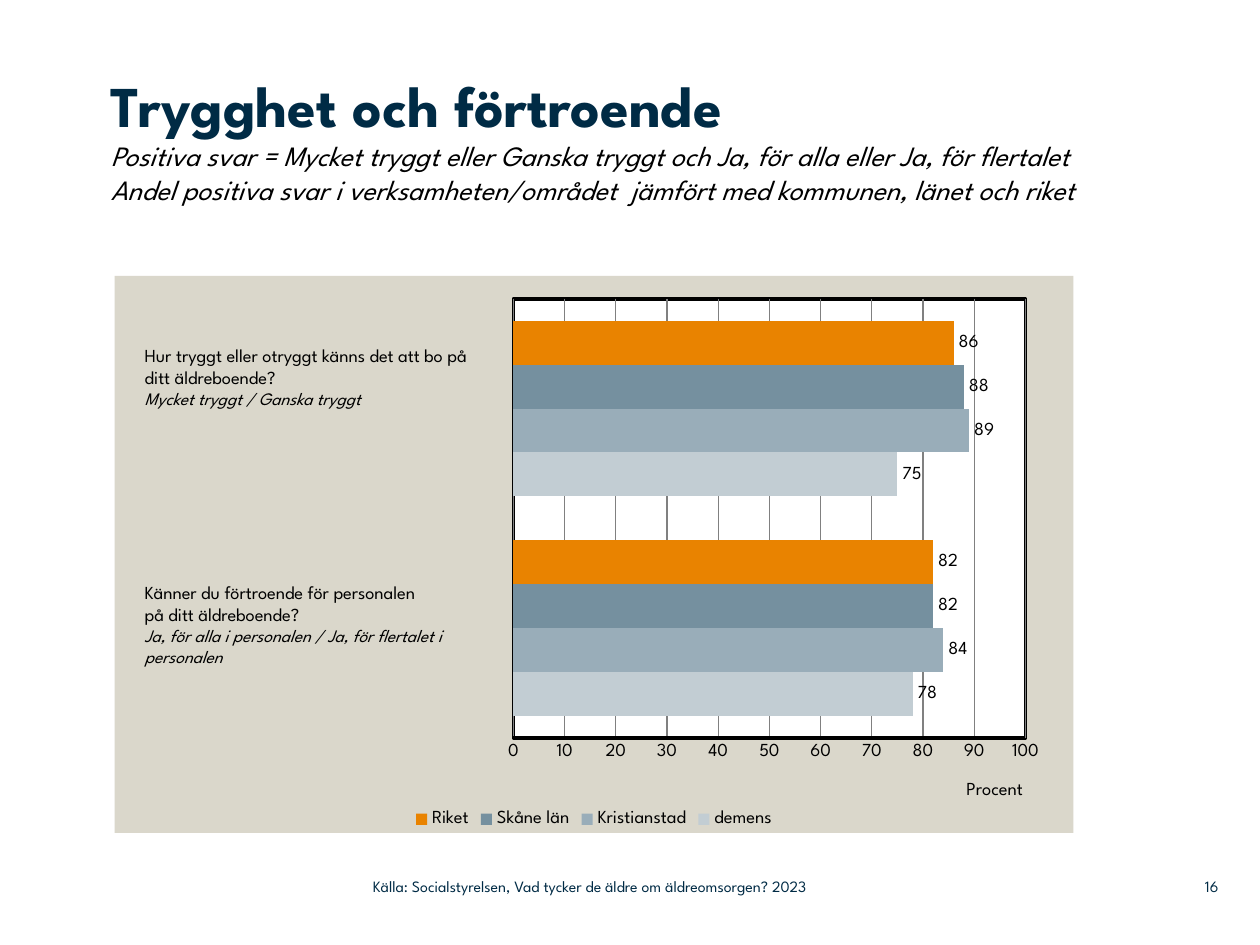
import pptx
import pptx.chart.data
import pptx.dml.color
import pptx.enum.chart
import pptx.enum.text
import pptx.oxml
import pptx.oxml.ns
import pptx.util
from pptx.util import Inches, Pt

FONT = "League Spartan"
COLORS = {"navy": "002B45", "black": "000000", "white": "FFFFFF", "sand": "DAD7CB", "grid": "808080"}
CATEGORIES = ["1", "2"]
SERIES = [
    ("demens", (78, 75), "C2CDD3"),
    ("Kristianstad", (84, 89), "99ADB9"),
    ("Skåne län", (82, 88), "75909F"),
    ("Riket", (82, 86), "E98300"),
]
QUESTIONS = [
    (2.68, 2.98, 0.81, ["Hur tryggt eller otryggt känns det att bo på ditt äldreboende?"],
     "Mycket tryggt / Ganska tryggt"),
    (4.56, 3, 0.98, ["Känner du förtroende för personalen", "på ditt äldreboende?"],
     "Ja, för alla i personalen / Ja, för flertalet i personalen"),
]
SUBTITLE = [
    "Positiva svar = Mycket tryggt eller Ganska tryggt och Ja, för alla eller Ja, för flertalet",
    "Andel positiva svar i verksamheten/området  jämfört med kommunen, länet och riket",
]


def rgb(hex_color):
    """Return a colour object for a hex string."""
    return pptx.dml.color.RGBColor.from_string(hex_color)


def set_font(font, size, color, bold=False, italic=False):
    """Apply the slide's typeface with the given look."""
    font.name, font.size, font.bold, font.italic = FONT, Pt(size), bold, italic
    font.color.rgb = rgb(color)


def clear_margins(frame):
    """Remove the insets of a text frame."""
    frame.margin_left = frame.margin_top = frame.margin_right = frame.margin_bottom = 0


def add_title(slide):
    """Fill the title placeholder with a heading and two italic lines."""
    title = slide.shapes.title
    title.left, title.top, title.width, title.height = Inches(0.88), Inches(0.55), Inches(7.75), Inches(1.64)
    frame = title.text_frame
    clear_margins(frame)
    frame.auto_size = pptx.enum.text.MSO_AUTO_SIZE.NONE
    frame.vertical_anchor = pptx.enum.text.MSO_ANCHOR.TOP
    paragraph = frame.paragraphs[0]
    paragraph.alignment = pptx.enum.text.PP_ALIGN.LEFT
    heading = paragraph.add_run()
    heading.text = "Trygghet och förtroende"
    set_font(heading.font, 33, COLORS["navy"], bold=True)
    for line in SUBTITLE:
        paragraph.add_line_break()
        run = paragraph.add_run()
        run.text = line
        set_font(run.font, 16, COLORS["black"], italic=True)


def add_question(slide, top, width, height, lines, answer):
    """Add a survey question with its positive answers in italics."""
    box = slide.shapes.add_textbox(Inches(1.05), Inches(top), Inches(width), Inches(height))
    frame = box.text_frame
    frame.word_wrap = True
    frame.text = "\n".join([*lines, answer])
    for paragraph in frame.paragraphs:
        set_font(paragraph.font, 10.5, COLORS["black"])
    set_font(paragraph.font, 10, COLORS["black"], italic=True)


def add_footer(slide, left, width, text, alignment):
    """Add one footer text."""
    box = slide.shapes.add_textbox(Inches(left), Inches(6.89), Inches(width), Inches(0.29))
    frame = box.text_frame
    frame.word_wrap = True
    clear_margins(frame)
    frame.vertical_anchor = pptx.enum.text.MSO_ANCHOR.MIDDLE
    frame.text = text
    frame.paragraphs[0].alignment = alignment
    set_font(frame.paragraphs[0].font, 9, COLORS["navy"])


def make_layout(x, y, width=None, height=None):
    """Build a manual chart layout, with an inner size if one is given."""
    values = [("xMode", "edge"), ("yMode", "edge"), ("x", x), ("y", y)]
    if width:
        values = [("layoutTarget", "inner"), *values, ("w", width), ("h", height)]
    content = "".join(f'<c:{name} val="{value}"/>' for name, value in values)
    namespace = pptx.oxml.ns.nsdecls("c")
    return pptx.oxml.parse_xml(f"<c:layout {namespace}><c:manualLayout>{content}</c:manualLayout></c:layout>")


def replace_layout(parent, layout, index):
    """Put a layout at the given place in a chart element."""
    for old in parent.findall(pptx.oxml.ns.qn("c:layout")):
        parent.remove(old)
    parent.insert(index, layout)


def fill_area(parent, color, line=None):
    """Fill the chart or plot area, with an optional 2 pt border."""
    border = f'<a:ln w="{Pt(2)}"><a:solidFill><a:srgbClr val="{line}"/></a:solidFill></a:ln>'
    properties = pptx.oxml.parse_xml(
        f'<c:spPr {pptx.oxml.ns.nsdecls("c", "a")}><a:solidFill><a:srgbClr val="{color}"/></a:solidFill>'
        f'{border if line else "<a:ln><a:noFill/></a:ln>"}</c:spPr>')
    text = parent.find(pptx.oxml.ns.qn("c:txPr"))
    if text is None:
        parent.append(properties)
    else:
        text.addprevious(properties)


def format_axes(chart):
    """Hide the category axis and style the percentage axis."""
    chart.category_axis.visible = False
    axis = chart.value_axis
    axis.minimum_scale, axis.maximum_scale, axis.major_unit = 0, 100, 10
    axis.major_tick_mark = pptx.enum.chart.XL_TICK_MARK.NONE
    axis.format.line.color.rgb = rgb(COLORS["black"])
    axis.format.line.width = Pt(2)
    axis.major_gridlines.format.line.color.rgb = rgb(COLORS["grid"])
    axis.major_gridlines.format.line.width = Pt(0.75)
    set_font(axis.tick_labels.font, 10.5, COLORS["black"])
    title = axis.axis_title
    title.text_frame.text = "Procent"
    set_font(title.text_frame.paragraphs[0].font, 10.5, COLORS["black"])
    replace_layout(title._element, make_layout(0.885, 0.9), 1)


def add_chart(slide):
    """Add the bar chart comparing the unit, municipality, county and country."""
    data = pptx.chart.data.CategoryChartData()
    data.categories = CATEGORIES
    for name, values, _ in SERIES:
        data.add_series(name, values)
    chart = slide.shapes.add_chart(
        pptx.enum.chart.XL_CHART_TYPE.BAR_CLUSTERED,
        Inches(0.91), Inches(2.19), Inches(7.61), Inches(4.42), data).chart
    set_font(chart.font, 10.5, COLORS["black"])
    chart.has_title = False
    chart.has_legend = True
    chart.legend.position = pptx.enum.chart.XL_LEGEND_POSITION.BOTTOM
    chart.legend.include_in_layout = False
    set_font(chart.legend.font, 10.5, COLORS["black"])
    format_axes(chart)
    plot = chart.plots[0]
    plot.gap_width, plot.overlap, plot.vary_by_categories = 100, 0, False
    for series, (_, _, color) in zip(plot.series, SERIES):
        series.format.fill.solid()
        series.format.fill.fore_color.rgb = rgb(color)
        labels = series.data_labels
        labels.show_value = True
        labels.position = pptx.enum.chart.XL_LABEL_POSITION.OUTSIDE_END
        set_font(labels.font, 10.5, COLORS["black"])
    plot_area = chart._chartSpace.chart.plotArea
    replace_layout(plot_area, make_layout(0.416, 0.041, 0.534, 0.789), 0)
    fill_area(plot_area, COLORS["white"], COLORS["black"])
    fill_area(chart._chartSpace, COLORS["sand"])


def main():
    """Build and save the slide."""
    presentation = pptx.Presentation()
    presentation.slide_width, presentation.slide_height = Inches(10), Inches(7.5)
    slide = presentation.slides.add_slide(presentation.slide_layouts[5])
    add_chart(slide)
    add_title(slide)
    for question in QUESTIONS:
        add_question(slide, *question)
    add_footer(slide, 9.2, 0.47, "16", pptx.enum.text.PP_ALIGN.RIGHT)
    add_footer(slide, 2.96, 4.43, "Källa: Socialstyrelsen, Vad tycker de äldre om äldreomsorgen? 2023",
               pptx.enum.text.PP_ALIGN.LEFT)
    presentation.save("out.pptx")


if __name__ == "__main__":
    main()
